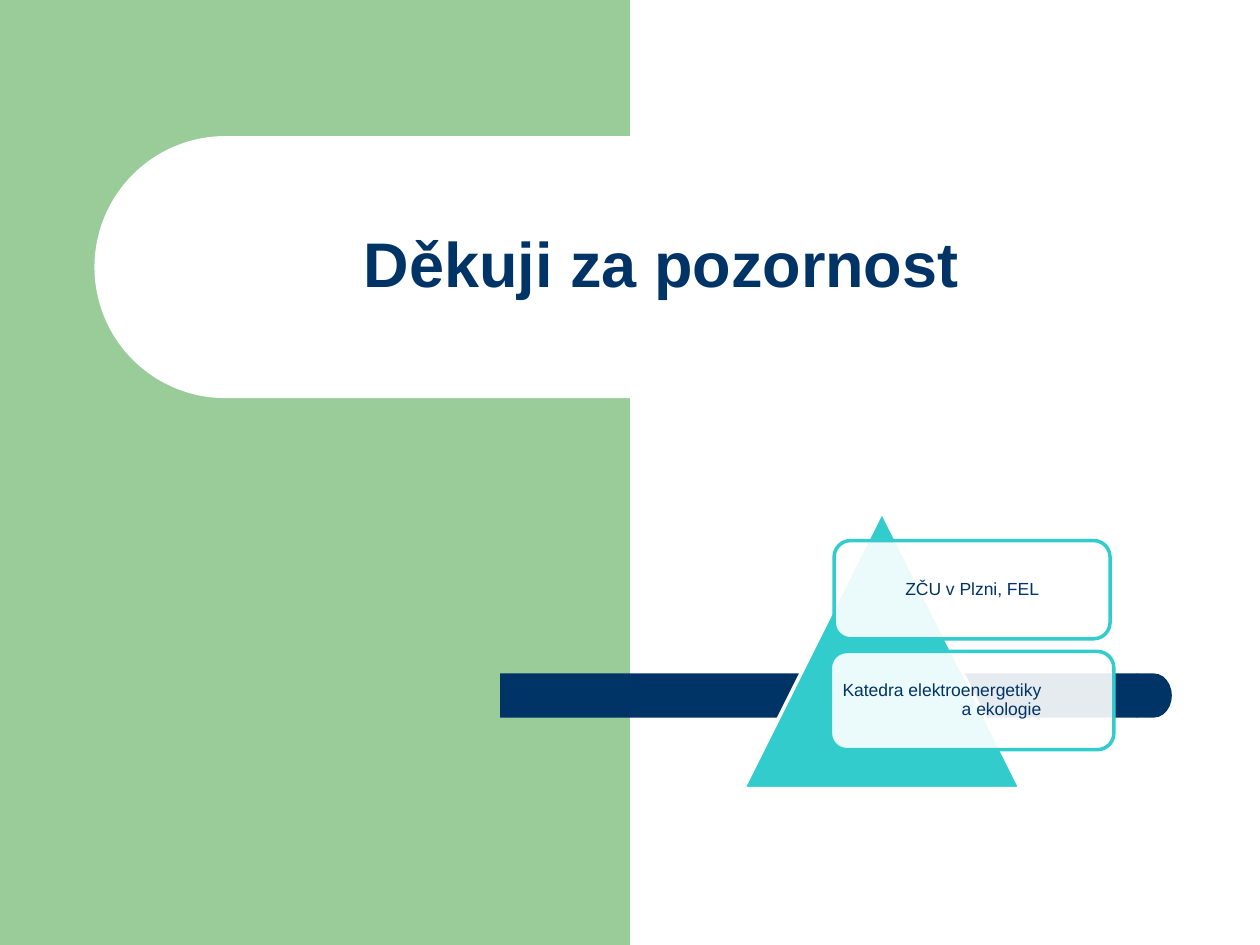
from dataclasses import dataclass

from lxml import etree
from pptx import Presentation
from pptx.dml.color import RGBColor
from pptx.enum.shapes import MSO_SHAPE as Shape
from pptx.enum.text import MSO_ANCHOR as Anchor, PP_ALIGN as Align
from pptx.oxml.ns import qn
from pptx.util import Inches, Pt


@dataclass(frozen=True)
class Theme:
    green: str = "99CC99"
    navy: str = "003366"
    teal: str = "33CCCC"
    white: str = "FFFFFF"
    font: str = "Arial"
    title_size: int = 36
    label_size: int = 10
    line_width: int = 2
    card_opacity: int = 90
    line_spacing: float = 0.9


class SlideBuilder:
    """Places elements on a grid of 100 columns by 75 rows."""

    unit = Inches(0.1)

    def __init__(self, slide, theme):
        self.slide = slide
        self.theme = theme

    def place(self, *cells):
        return [round(cell * self.unit) for cell in cells]

    def shape(self, kind, cells, fill=None, line=None, rounding=None, opacity=100):
        shape = self.slide.shapes.add_shape(kind, *self.place(*cells))
        shape.shadow.inherit = False
        if rounding is not None:
            shape.adjustments[0] = rounding
        if fill:
            shape.fill.solid()
            shape.fill.fore_color.rgb = RGBColor.from_string(fill)
        else:
            shape.fill.background()
        if line:
            shape.line.color.rgb = RGBColor.from_string(line)
            shape.line.width = Pt(self.theme.line_width)
        else:
            shape.line.fill.background()
        if opacity < 100:
            color = shape.element.spPr.find(qn("a:solidFill"))[0]
            etree.SubElement(color, qn("a:alpha"), val=str(opacity * 1000))
        return shape

    def set_text(self, box, text, size, bold=False, align=Align.CENTER):
        frame = box.text_frame
        frame.word_wrap = True
        frame.vertical_anchor = Anchor.MIDDLE
        frame.text = text
        para = frame.paragraphs[0]
        para.alignment = align
        para.line_spacing = self.theme.line_spacing
        font = para.runs[0].font
        font.name, font.size, font.bold = self.theme.font, Pt(size), bold
        font.color.rgb = RGBColor.from_string(self.theme.navy)

    def title(self, text, cells):
        box = self.shape(Shape.ROUNDED_RECTANGLE, cells, rounding=0.5)
        self.set_text(box, text, self.theme.title_size, bold=True)

    def card(self, text, cells, align=Align.CENTER, right_inset=0.4):
        """Draws a translucent rounded card with its label laid over it."""
        theme = self.theme
        self.shape(Shape.ROUNDED_RECTANGLE, cells, theme.white, theme.teal,
                   opacity=theme.card_opacity)
        left, top, width, height = cells
        pad = 0.37
        label = self.slide.shapes.add_textbox(
            *self.place(left + pad, top + pad, width - 2 * pad, height - 2 * pad))
        frame = label.text_frame
        frame.margin_left = frame.margin_top = frame.margin_bottom = Inches(0.04)
        frame.margin_right = round(right_inset * self.unit)
        self.set_text(label, text, theme.label_size, align=align)


def main():
    theme = Theme()
    deck = Presentation()
    deck.slide_width, deck.slide_height = Inches(10), Inches(7.5)
    builder = SlideBuilder(deck.slides.add_slide(deck.slide_layouts[6]), theme)

    builder.shape(Shape.RECTANGLE, (0, 0, 50, 75), theme.green)
    builder.shape(Shape.ROUNDED_RECTANGLE, (7.5, 10.8, 56.7, 20.8), theme.white,
                  rounding=0.5)

    bar_left, bar_top, bar_width, bar_height = 39.7, 53.45, 50.6, 3.5
    builder.shape(Shape.ROUNDED_RECTANGLE, (bar_left, bar_top, bar_width, bar_height),
                  theme.navy, rounding=0)
    builder.shape(Shape.FLOWCHART_DELAY,
                  (bar_left + bar_width - 0.1, bar_top, 2.8, bar_height), theme.navy)

    builder.title("Děkuji za pozornost", (7.5, 10.8, 90, 20.8))

    builder.shape(Shape.ISOSCELES_TRIANGLE, (59, 40.6, 22, 22), theme.teal, theme.white)
    builder.card("ZČU v Plzni, FEL", (66.2, 42.9, 21.9, 7.8))
    builder.card("Katedra elektroenergetiky a ekologie", (65.9, 51.7, 22.5, 7.8),
                 align=Align.RIGHT, right_inset=5.4)

    deck.save("out.pptx")


if __name__ == "__main__":
    main()
